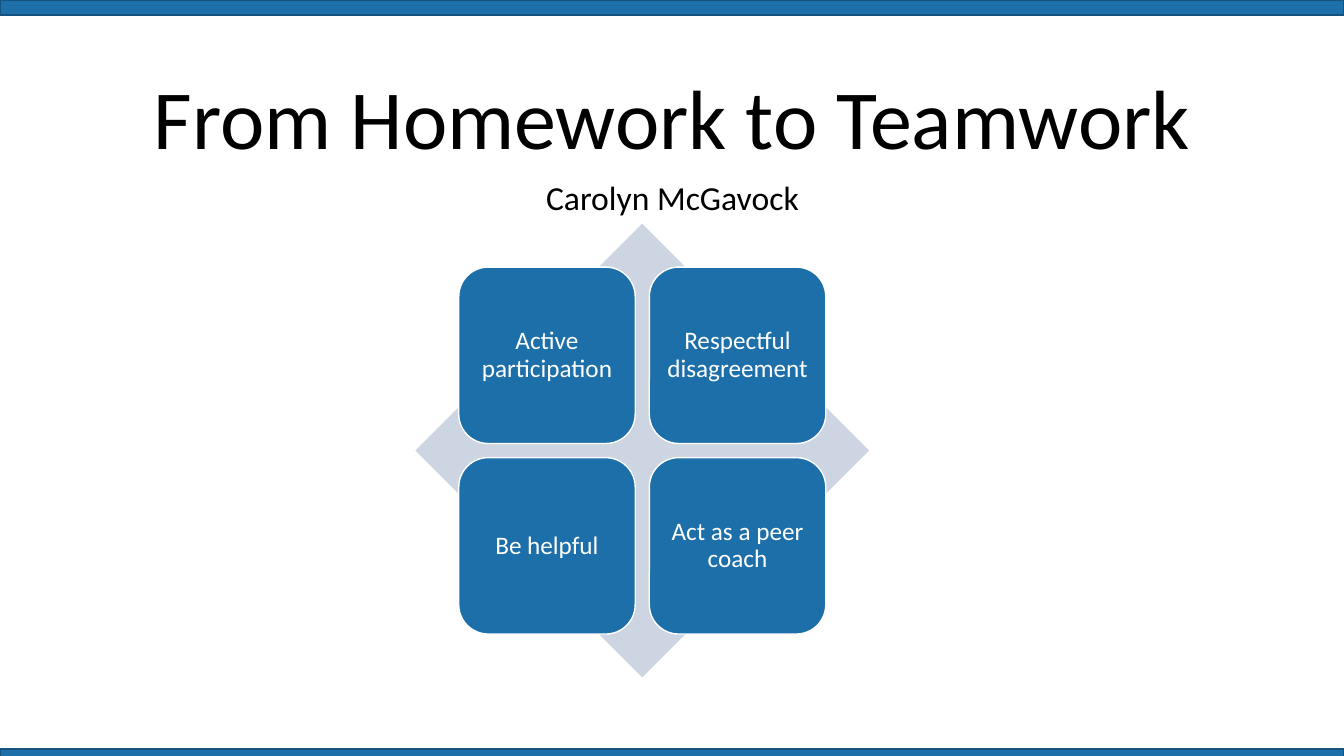
from dataclasses import dataclass

from pptx import Presentation
from pptx.dml.color import RGBColor
from pptx.enum.shapes import MSO_SHAPE
from pptx.enum.text import MSO_ANCHOR, PP_ALIGN
from pptx.shapes.autoshape import Shape
from pptx.text.text import TextFrame
from pptx.util import Inches, Pt

RECT, DIAMOND, ROUND_RECT = MSO_SHAPE.RECTANGLE, MSO_SHAPE.DIAMOND, MSO_SHAPE.ROUNDED_RECTANGLE
TOP, MIDDLE, BOTTOM = MSO_ANCHOR.TOP, MSO_ANCHOR.MIDDLE, MSO_ANCHOR.BOTTOM
CENTER = PP_ALIGN.CENTER

BLUE = RGBColor(0x1D, 0x6F, 0xA9)
DARK_BLUE = RGBColor(0x15, 0x52, 0x7D)
PALE_BLUE = RGBColor(0xCD, 0xD5, 0xE2)
WHITE = RGBColor(0xFF, 0xFF, 0xFF)
BLACK = RGBColor(0x00, 0x00, 0x00)

FONT = "Calibri"
SLIDE_W, SLIDE_H = 13.33, 7.5
BAR_H = 0.15
TILE_LEFT, TILE_TOP, TILE_SIZE, TILE_STEP = 4.55, 2.65, 1.75, 1.89


@dataclass
class Heading:
    text: str
    left: float
    top: float
    width: float
    height: float
    size: int
    anchor: MSO_ANCHOR


@dataclass
class Tile:
    text: str
    row: int
    col: int


HEADINGS = [
    Heading("From Homework to Teamwork", 1.25, 0.56, 10.83, 1.15, 60, BOTTOM),
    Heading("Carolyn McGavock", 1.35, 1.75, 10.64, 0.49, 24, TOP),
]
TILES = [
    Tile("Active participation", 0, 0),
    Tile("Respectful disagreement", 0, 1),
    Tile("Be helpful", 1, 0),
    Tile("Act as a peer coach", 1, 1),
]


def write(tf: TextFrame, text: str, size: int, color: RGBColor, anchor: MSO_ANCHOR) -> None:
    tf.text = text
    tf.word_wrap = True
    tf.vertical_anchor = anchor
    p = tf.paragraphs[0]
    p.alignment = CENTER
    p.line_spacing = 0.9
    font = p.runs[0].font
    font.name = FONT
    font.size = Pt(size)
    font.color.rgb = color


def add_filled(shapes, kind: MSO_SHAPE, left: float, top: float, width: float, height: float,
               fill: RGBColor, line: RGBColor | None = None) -> Shape:
    sp = shapes.add_shape(kind, Inches(left), Inches(top), Inches(width), Inches(height))
    sp.shadow.inherit = False
    sp.fill.solid()
    sp.fill.fore_color.rgb = fill
    if line is None:
        sp.line.fill.background()
    else:
        sp.line.color.rgb = line
        sp.line.width = Pt(1)
    return sp


def add_heading(shapes, h: Heading) -> None:
    sp = shapes.add_textbox(Inches(h.left), Inches(h.top), Inches(h.width), Inches(h.height))
    write(sp.text_frame, h.text, h.size, BLACK, h.anchor)


def add_tile(shapes, tile: Tile) -> None:
    sp = add_filled(shapes, ROUND_RECT, TILE_LEFT + tile.col * TILE_STEP,
                    TILE_TOP + tile.row * TILE_STEP, TILE_SIZE, TILE_SIZE, BLUE, WHITE)
    tf = sp.text_frame
    tf.margin_left = tf.margin_right = tf.margin_top = tf.margin_bottom = Inches(0.07)
    write(tf, tile.text, 18, WHITE, MIDDLE)


def main() -> None:
    prs = Presentation()
    prs.slide_width, prs.slide_height = Inches(SLIDE_W), Inches(SLIDE_H)
    s = prs.slides.add_slide(prs.slide_layouts[6])

    # Title and author
    for heading in HEADINGS:
        add_heading(s.shapes, heading)

    # Bars along the top and bottom edges
    for top in (0, 7.43):
        add_filled(s.shapes, RECT, 0, top, SLIDE_W, BAR_H, BLUE, DARK_BLUE)

    # Diamond matrix
    matrix = s.shapes.add_group_shape()
    add_filled(matrix.shapes, DIAMOND, 4.12, 2.22, 4.5, 4.5, PALE_BLUE)
    for tile in TILES:
        add_tile(matrix.shapes, tile)

    prs.save("out.pptx")


if __name__ == "__main__":
    main()
